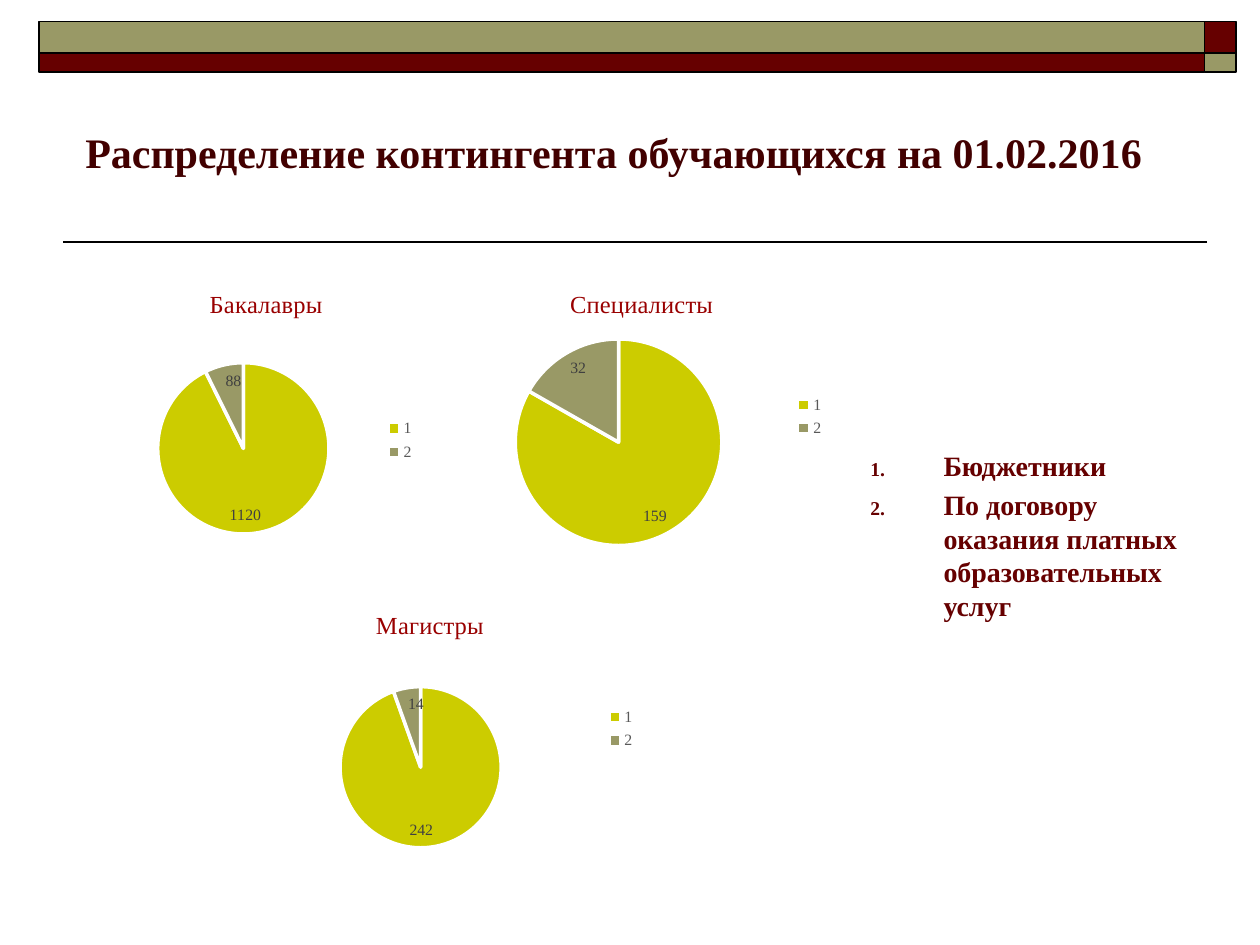
from lxml.etree import SubElement
from pptx import Presentation
from pptx.chart.data import CategoryChartData
from pptx.dml.color import RGBColor
from pptx.enum.chart import XL_CHART_TYPE as ChartType, XL_LABEL_POSITION as LabelPosition
from pptx.enum.chart import XL_LEGEND_POSITION as LegendPosition
from pptx.enum.shapes import MSO_CONNECTOR as Connector, MSO_SHAPE as Shape
from pptx.enum.text import MSO_ANCHOR as Anchor, PP_ALIGN as Align
from pptx.oxml import parse_xml
from pptx.oxml.ns import nsdecls, qn
from pptx.util import Inches, Pt

BLACK = RGBColor(0x00, 0x00, 0x00)
WHITE = RGBColor(0xFF, 0xFF, 0xFF)
MAROON = RGBColor(0x66, 0x00, 0x00)
DARK_MAROON = RGBColor(0x42, 0x00, 0x00)
RED = RGBColor(0x99, 0x00, 0x00)
OLIVE = RGBColor(0x99, 0x99, 0x66)
LIME = RGBColor(0xCC, 0xCC, 0x00)
LABEL_GRAY = RGBColor(0x40, 0x40, 0x40)
LEGEND_GRAY = RGBColor(0x59, 0x59, 0x59)

COLUMNS, ROWS = 100, 75


class SlideBuilder:
    """Draws styled elements on the current page, measured in grid columns and rows."""

    font_name = "Times New Roman"

    def __init__(self, deck):
        self.page = deck.slides.add_slide(deck.slide_layouts[6])
        self.column = deck.slide_width / COLUMNS
        self.row = deck.slide_height / ROWS

    def place(self, left, top, width, height):
        return (round(left * self.column), round(top * self.row),
                round(width * self.column), round(height * self.row))

    def style(self, font, size, color, bold=False):
        font.name, font.size, font.bold = self.font_name, Pt(size), bold
        font.color.rgb = color

    def bar(self, area, color):
        box = self.page.shapes.add_shape(Shape.RECTANGLE, *self.place(*area))
        box.shadow.inherit = False
        box.fill.solid()
        box.fill.fore_color.rgb = color
        box.line.color.rgb = BLACK
        box.line.width = Pt(1)

    def rule(self, start, end, row):
        ends = self.place(start, row, end, row)
        line = self.page.shapes.add_connector(Connector.STRAIGHT, *ends)
        line.line.color.rgb = BLACK
        line.line.width = Pt(1)
        SubElement(line._element.spPr, qn("a:effectLst"))

    def text_frame(self, area):
        frame = self.page.shapes.add_textbox(*self.place(*area)).text_frame
        frame.word_wrap = True
        return frame

    def title(self, area, text):
        frame = self.text_frame(area)
        frame.vertical_anchor = Anchor.BOTTOM
        para = frame.paragraphs[0]
        para.text, para.alignment = text, Align.CENTER
        self.style(para.font, 24, DARK_MAROON, bold=True)

    def numbered_list(self, area, items):
        frame = self.text_frame(area)
        for index, item in enumerate(items):
            para = frame.add_paragraph() if index else frame.paragraphs[0]
            para.text, para.space_before = item, Pt(3.2)
            props = para._p.get_or_add_pPr()
            props.set("marL", str(Inches(0.58)))
            props.set("indent", str(-Inches(0.58)))
            color = SubElement(props, qn("a:buClr"))
            SubElement(color, qn("a:srgbClr"), val=str(MAROON))
            SubElement(props, qn("a:buSzPct"), val="70000")
            SubElement(props, qn("a:buAutoNum"), type="arabicPeriod")
            self.style(para.font, 16, MAROON, bold=True)

    def set_layout(self, element, area, left, top, size=None, inner=False):
        """Fixes the place of a chart part, given on the page grid."""
        shares = {"x": (left - area[0]) / area[2], "y": (top - area[1]) / area[3]}
        if size:
            shares.update(w=size / area[2], h=size / area[3])
        target = '<c:layoutTarget val="inner"/>' if inner else ""
        modes = "".join(f'<c:{axis}Mode val="edge"/>' for axis in "xy")
        values = "".join(f'<c:{key} val="{share:.3f}"/>' for key, share in shares.items())
        layout = parse_xml(f'<c:layout {nsdecls("c")}><c:manualLayout>{target}{modes}{values}'
                           '</c:manualLayout></c:layout>')
        for old in element.findall(qn("c:layout")):
            element.remove(old)
        before = element.find(qn("c:tx"))
        if before is None:
            before = element.find(qn("c:legendPos"))
        if before is None:
            element.insert(0, layout)
        else:
            before.addnext(layout)

    def pie(self, area, heading, values, heading_at, center, radius, legend_at):
        data = CategoryChartData()
        data.categories = ["1", "2"]
        data.add_series("Series 1", values)
        frame = self.page.shapes.add_chart(ChartType.PIE, *self.place(*area), data)
        chart = frame.chart
        self.style(chart.font, 10, BLACK)

        chart.has_title = True
        para = chart.chart_title.text_frame.paragraphs[0]
        para.text = heading
        self.style(para.font, 14, RED)
        self.set_layout(chart.chart_title._element, area, *heading_at)

        chart.has_legend = True
        chart.legend.position = LegendPosition.RIGHT
        chart.legend.include_in_layout = False
        self.style(chart.legend.font, 9, LEGEND_GRAY)
        self.set_layout(chart.legend._element, area, *legend_at)

        plot = chart.plots[0]
        plot.vary_by_categories = True
        for index, color in enumerate((LIME, OLIVE)):
            slice_format = plot.series[0].points[index].format
            slice_format.fill.solid()
            slice_format.fill.fore_color.rgb = color
            slice_format.line.color.rgb = WHITE
            slice_format.line.width = Pt(2)
        labels = plot.series[0].data_labels
        labels.show_value = True
        labels.show_percentage = False
        labels.position = LabelPosition.INSIDE_END
        self.style(labels.font, 9, LABEL_GRAY)
        plot_area = chart._chartSpace.chart.plotArea
        self.set_layout(plot_area, area, center[0] - radius, center[1] - radius,
                        2 * radius, inner=True)


def main():
    deck = Presentation()
    deck.slide_width, deck.slide_height = Inches(10), Inches(7.5)
    builder = SlideBuilder(deck)

    builder.rule(95.8, 5, 19.2)
    for top, height, colors in ((1.7, 2.5, (OLIVE, MAROON)), (4.2, 1.5, (MAROON, OLIVE))):
        for left, width, color in zip((3.1, 95.6), (92.5, 2.5), colors):
            builder.bar((left, top, width, height), color)

    builder.title((5, 5.8, 87.4, 8.7), "Распределение контингента обучающихся на 01.02.2016")
    builder.numbered_list((68.1, 35.1, 26.9, 15.7), (
        "Бюджетники", "По договору оказания платных образовательных услуг"))

    builder.pie((5.3, 21.1, 31.5, 22.9), "Бакалавры", (1120, 88),
                (16.3, 22.5), (19.3, 35.6), 6.8, (30.5, 32.9))
    builder.pie((35, 21.1, 31.5, 23.7), "Специалисты", (159, 32),
                (44.9, 22.5), (49.1, 35.1), 8.2, (63, 31))
    builder.pie((18.6, 46.7, 32.9, 22.1), "Магистры", (242, 14),
                (29.5, 48), (33.4, 60.9), 6.4, (48, 55.8))

    deck.save("out.pptx")


if __name__ == "__main__":
    main()
